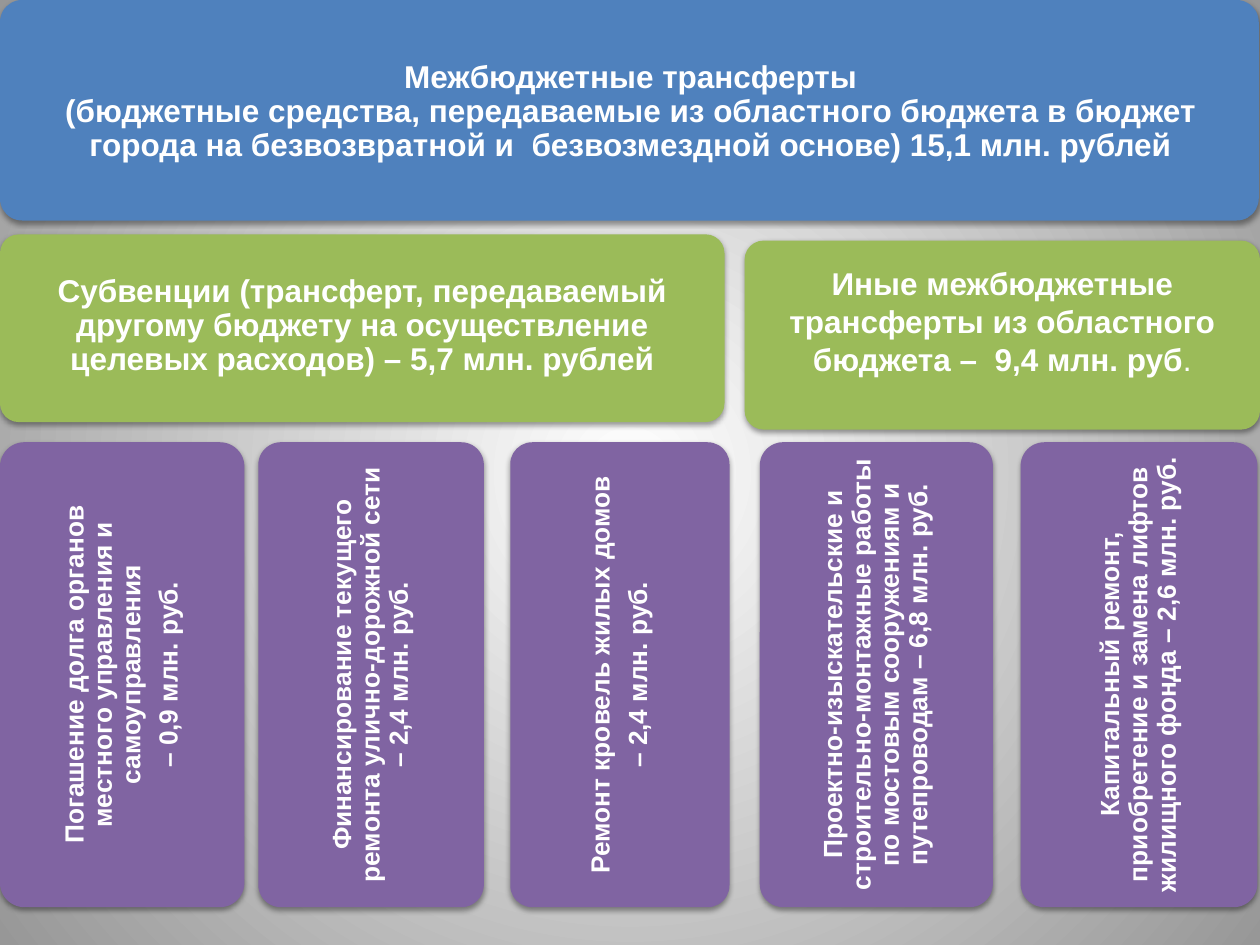
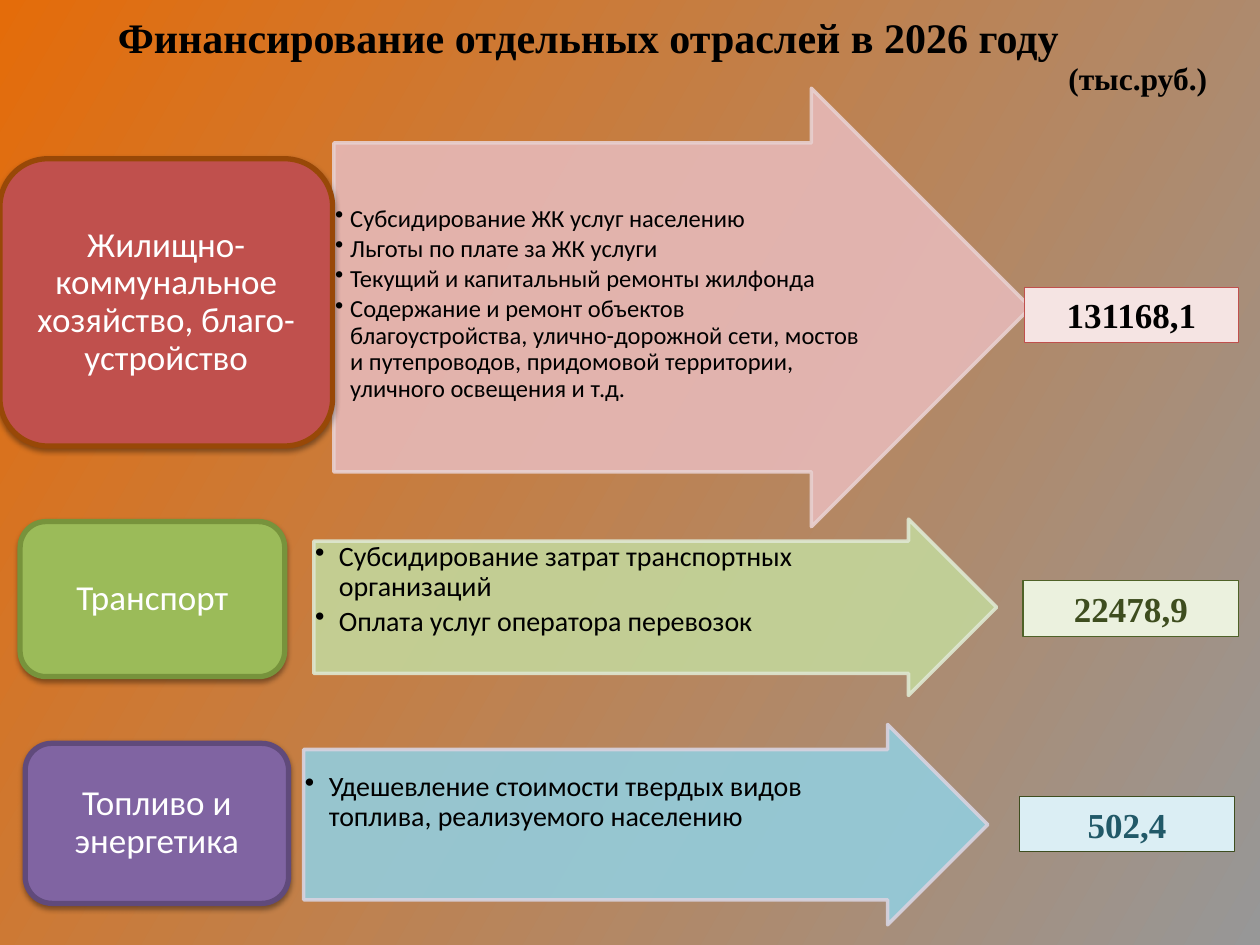
from pptx import Presentation
from pptx.dml.color import RGBColor
from pptx.enum.shapes import MSO_SHAPE
from pptx.enum.text import MSO_ANCHOR, MSO_AUTO_SIZE, PP_ALIGN
from pptx.oxml.ns import qn
from pptx.util import Inches, Pt
from lxml import etree

ROUNDED, ARROW, RECT = MSO_SHAPE.ROUNDED_RECTANGLE, MSO_SHAPE.RIGHT_ARROW, MSO_SHAPE.RECTANGLE
TOP, MIDDLE = MSO_ANCHOR.TOP, MSO_ANCHOR.MIDDLE
LEFT, CENTER = PP_ALIGN.LEFT, PP_ALIGN.CENTER
NO_FIT = MSO_AUTO_SIZE.NONE
TITLE_ONLY = 5

WHITE, BLACK, GREY, ORANGE = "FFFFFF", "000000", "979797", "E46C0A"
BLUE, GREEN, PURPLE, RED = "4F81BD", "9BBB59", "8064A2", "C0504D"
SANS, BODY, SERIF = "Arial", "Calibri", "Times New Roman"

BANNER_TEXT = [
    "Межбюджетные трансферты",
    "(бюджетные средства, передаваемые из областного бюджета в бюджет города "
    "на безвозвратной и  безвозмездной основе) 15,1 млн. рублей",
]
SUBVENTIONS = ("Субвенции (трансферт, передаваемый другому бюджету на осуществление "
               "целевых расходов) – 5,7 млн. рублей")
OTHER_TRANSFERS = "Иные межбюджетные трансферты из областного бюджета –  9,4 млн. руб"

# left, width, paragraphs
PURPOSES = [
    (0, 1.94, ["Погашение долга органов местного управления и самоуправления",
               "– 0,9 млн. руб."]),
    (2.05, 1.79, ["Финансирование текущего ремонта улично-дорожной сети – 2,4 млн. руб."]),
    (4.05, 1.74, ["Ремонт кровель жилых домов", "– 2,4 млн. руб."]),
    (6.03, 1.85, ["Проектно-изыскательские и строительно-монтажные работы по мостовым "
                  "сооружениям и путепроводам – 6,8 млн. руб."]),
    (8.1, 1.88, ["Капитальный ремонт, приобретение и замена лифтов жилищного фонда "
                 "– 2,6 млн. руб."]),
]

SECTORS = [
    dict(name="Жилищно-коммунальное хозяйство, благо-устройство",
         name_box=(0, 1.26, 2.64, 2.28), name_colors=(RED, "984807"),
         arrow_box=(2.65, 0.7, 5.53, 3.48), arrow_colors=("E6B9B8", "E8D0D0"),
         measures=["Субсидирование ЖК услуг населению",
                   "Льготы по плате за ЖК услуги",
                   "Текущий и капитальный ремонты жилфонда",
                   "Содержание и ремонт объектов благоустройства, улично-дорожной сети, "
                   "мостов и путепроводов, придомовой территории, уличного освещения и т.д."],
         size=14, indent=0.12, drop=0.5,
         amount="131168,1", amount_box=(8.13, 2.28, 1.7, 0.44),
         amount_colors=("F5E4E3", RED, BLACK)),
    dict(name="Транспорт",
         name_box=(0.16, 4.14, 2.1, 1.23), name_colors=(GREEN, "77933C"),
         arrow_box=(2.49, 4.12, 5.42, 1.4), arrow_colors=("C3D69B", "DEE7D1"),
         measures=["Субсидирование затрат транспортных организаций",
                   "Оплата услуг оператора перевозок"],
         size=16, indent=0.19, drop=0.01,
         amount="22478,9", amount_box=(8.12, 4.61, 1.71, 0.44),
         amount_colors=("EBF1DE", "4F6228", "3E4D1F")),
    dict(name="Топливо и энергетика",
         name_box=(0.2, 5.9, 2.09, 1.27), name_colors=(PURPLE, "604A7B"),
         arrow_box=(2.41, 5.75, 5.43, 1.59), arrow_colors=("93CDDD", "D8D3E0"),
         measures=["Удешевление стоимости твердых видов топлива, реализуемого населению"],
         size=16, indent=0.19, drop=0.18,
         amount="502,4", amount_box=(8.09, 6.32, 1.71, 0.44),
         amount_colors=("DBEEF4", "3E4D1F", "215968")),
]


def rgb(value):
    return RGBColor.from_string(value)


def apply(target, **values):
    for name, value in values.items():
        setattr(target, name, value)


def child(parent, tag, **attributes):
    element = etree.SubElement(parent, qn(tag))
    for name, value in attributes.items():
        element.set(name, str(value))
    return element


def paint_background(slide, start, end, angle=None):
    """Fill with a linear gradient, or from the centre outwards without an angle."""
    fill = slide.background.fill
    fill.gradient()
    for stop, color in zip(fill.gradient_stops, (start, end)):
        stop.color.rgb = rgb(color)
    if angle is not None:
        fill.gradient_angle = 360 - angle
        return
    gradient = slide.element.find(".//" + qn("a:gradFill"))
    gradient.remove(gradient.find(qn("a:lin")))
    circle = child(gradient, "a:path", path="circle")
    child(circle, "a:fillToRect", l=50000, t=50000, r=50000, b=50000)


def format_font(font, face, size, color, bold=False):
    apply(font, name=face, size=Pt(size), bold=bold)
    font.color.rgb = rgb(color)


def set_bullet(paragraph, indent):
    properties = paragraph._p.get_or_add_pPr()
    properties.set("marL", str(Inches(indent)))
    properties.set("indent", str(-Inches(indent)))
    child(properties, "a:buChar", char="•")


def write(shape, paragraphs, font, margins=(0.1, 0.05, 0.1, 0.05), anchor=MIDDLE,
          align=CENTER, spacing=0.9, after=0.35, indent=None):
    """Write paragraphs; margins run left, top, right, bottom; after is a share of the size."""
    frame = shape.text_frame
    sides = ("margin_left", "margin_top", "margin_right", "margin_bottom")
    apply(frame, word_wrap=True, auto_size=NO_FIT, vertical_anchor=anchor,
          **{side: Inches(margin) for side, margin in zip(sides, margins)})
    for index, text in enumerate(paragraphs):
        paragraph = frame.add_paragraph() if index else frame.paragraphs[0]
        if indent:
            set_bullet(paragraph, indent)
        last = index == len(paragraphs) - 1
        apply(paragraph, alignment=align, line_spacing=spacing, space_before=Pt(0),
              space_after=Pt(0 if last else round(font["size"] * after, 1)))
        run = paragraph.add_run()
        run.text = text
        format_font(run.font, **font)


def place(shape, box):
    apply(shape, **dict(zip(("left", "top", "width", "height"), map(Inches, box))))


def add_block(slide, kind, box, fill, line=None, line_width=1.0, adjustments=()):
    block = slide.shapes.add_shape(kind, *map(Inches, box))
    block.shadow.inherit = False
    block.fill.solid()
    block.fill.fore_color.rgb = rgb(fill)
    if line:
        block.line.color.rgb = rgb(line)
        block.line.width = Pt(line_width)
    else:
        block.line.fill.background()
    for index, value in enumerate(adjustments):
        block.adjustments[index] = value
    return block


def add_card(slide, box, fill, **style):
    """Rounded block with a soft shadow below it."""
    card = add_block(slide, ROUNDED, box, fill, **style)
    effects = card.element.spPr.find(qn("a:effectLst"))
    shadow = child(effects, "a:outerShdw", blurRad=Pt(3.1), dist=Pt(1.6),
                   dir=90 * 60000, rotWithShape=0)
    color = child(shadow, "a:srgbClr", val=BLACK)
    child(color, "a:alpha", val=38000)
    return card


def add_transfer_card(slide, box, fill):
    return add_card(slide, box, fill, adjustments=[0.1])


def add_purpose(slide, left, width, paragraphs):
    card = add_transfer_card(slide, (left, 3.51, width, 3.69), PURPLE)
    write(card, paragraphs, dict(face=SANS, size=15, color=WHITE, bold=True), [0.06] * 4)
    card.text_frame._txBody.bodyPr.set("vert", "vert270")


def add_arrow(slide, sector):
    fill, line = sector["arrow_colors"]
    arrow = add_block(slide, ARROW, sector["arrow_box"], fill, line, 2, [0.75, 0.5])
    for color in arrow.element.spPr.iter(qn("a:srgbClr")):
        child(color, "a:alpha", val=90000)
    write(arrow, sector["measures"], dict(face=BODY, size=sector["size"], color=BLACK),
          (0.01, sector["drop"], 0.01, 0.01), TOP, LEFT, after=0.15,
          indent=sector["indent"])


def add_sector(slide, sector):
    add_arrow(slide, sector)
    fill, line = sector["name_colors"]
    name = add_card(slide, sector["name_box"], fill, line=line, line_width=3)
    write(name, [sector["name"]], dict(face=BODY, size=20, color=WHITE),
          (0.08, 0.04, 0.08, 0.04))
    fill, line, ink = sector["amount_colors"]
    amount = add_block(slide, RECT, sector["amount_box"], fill, line, 0.75)
    write(amount, [sector["amount"]], dict(face=SERIF, size=20, color=ink, bold=True),
          spacing=1.0)


def build_transfers(slide):
    paint_background(slide, WHITE, GREY)
    heading = dict(face=SANS, size=18, color=WHITE, bold=True)
    title = slide.shapes.title
    banner = add_transfer_card(slide, (0, 0, 9.99, 1.75), BLUE)
    title.element.addprevious(banner.element)
    place(title, (0.06, 0.05, 9.89, 1.65))
    write(title, BANNER_TEXT, heading, [0.07] * 4, after=0)
    title.text_frame.paragraphs[0].line_spacing = 1.0

    subventions = add_transfer_card(slide, (0, 1.86, 5.75, 1.49), GREEN)
    write(subventions, [SUBVENTIONS], heading, (0.07, 0.04, 0.07, 0.07))
    others = add_transfer_card(slide, (5.91, 1.91, 4.09, 1.5), GREEN)
    write(others, [OTHER_TRANSFERS], heading, (0.07, 0.04, 0.07, 0.27), spacing=1.0)
    full_stop = others.text_frame.paragraphs[0].add_run()
    full_stop.text = "."
    format_font(full_stop.font, SANS, 18, WHITE)
    for purpose in PURPOSES:
        add_purpose(slide, *purpose)


def build_sectors(slide):
    paint_background(slide, ORANGE, GREY, angle=30)
    title = slide.shapes.title
    place(title, (0.02, 0.04, 9.3, 0.72))
    write(title, ["Финансирование отдельных отраслей в 2026 году"],
          dict(face=SERIF, size=24, color=BLACK, bold=True), anchor=TOP, spacing=1.0)
    unit = slide.shapes.add_textbox(*map(Inches, (8.37, 0.42, 1.32, 0.4)))
    write(unit, ["(тыс.руб.)"], dict(face=SERIF, size=18, color=BLACK, bold=True),
          anchor=TOP, spacing=1.0)
    for sector in SECTORS:
        add_sector(slide, sector)


def main():
    deck = Presentation()
    apply(deck, slide_width=Inches(10), slide_height=Inches(7.5))
    for build in (build_transfers, build_sectors):
        build(deck.slides.add_slide(deck.slide_layouts[TITLE_ONLY]))
    deck.save("out.pptx")


if __name__ == "__main__":
    main()
